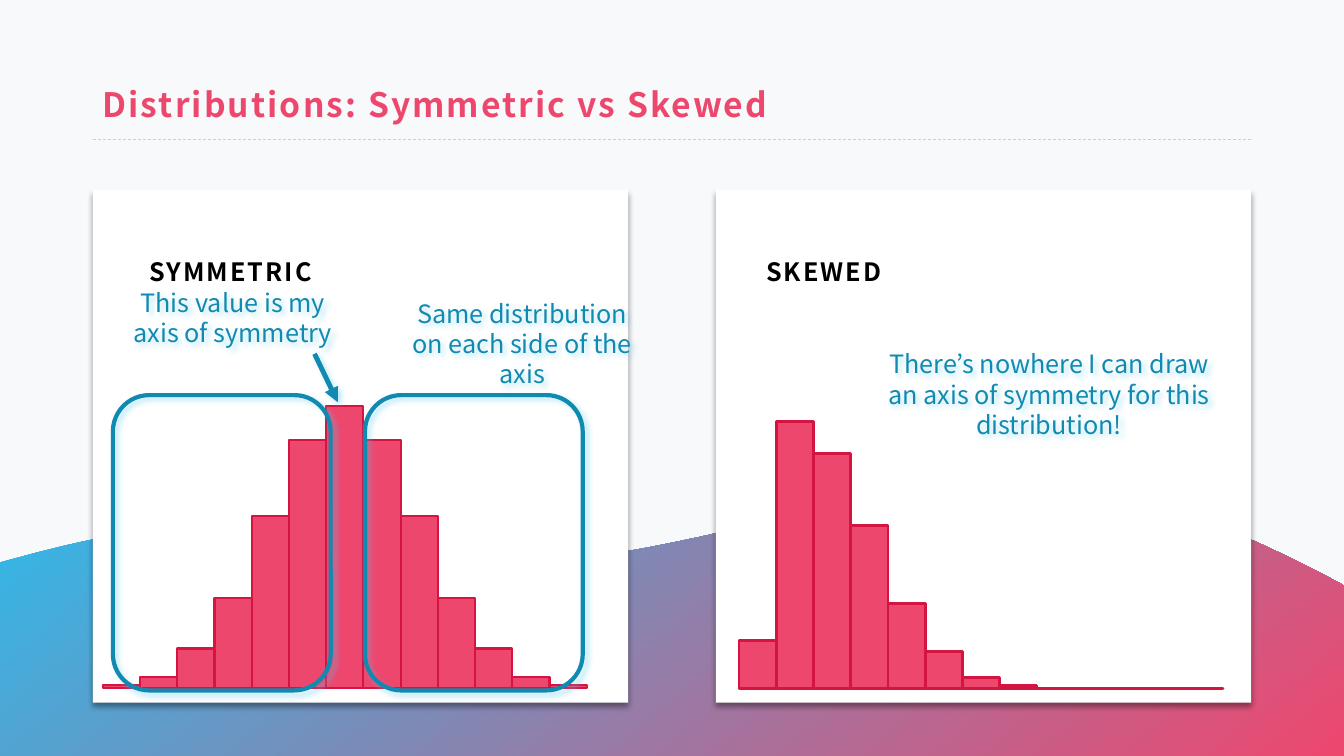
from dataclasses import dataclass

from lxml.etree import SubElement
from pptx import Presentation
from pptx.chart.data import CategoryChartData
from pptx.dml.color import RGBColor
from pptx.enum.chart import XL_CHART_TYPE
from pptx.enum.dml import MSO_LINE
from pptx.enum.shapes import MSO_CONNECTOR, MSO_SHAPE
from pptx.enum.text import MSO_ANCHOR, PP_ALIGN
from pptx.oxml import parse_xml
from pptx.oxml.ns import nsdecls, qn
from pptx.util import Inches, Pt


@dataclass(frozen=True)
class Theme:
    font: str = "Noto Sans CJK JP"
    background: str = "F8F9FB"
    card: str = "FFFFFF"
    text: str = "000000"
    accent: str = "EE476E"
    bar_line: str = "D41441"
    note: str = "118AB1"
    note_shadow: str = "52C8EE"
    rule: str = "D0CECE"
    wave_start: str = "2DBAEA"
    title_size: float = 24
    body_size: float = 18
    chart_size: float = 10


THEME = Theme()


def color(value):
    return RGBColor.from_string(value)


def add_effects(shape, shadow_color=None, direction=45):
    """Replace the inherited shadow by none or by a soft coloured one."""
    properties = shape._element.spPr
    effects = parse_xml(f"<a:effectLst {nsdecls('a')}/>")
    if shadow_color:
        shadow = SubElement(effects, qn("a:outerShdw"), blurRad=str(Pt(4)),
                            dist=str(Pt(3)), dir=str(direction * 60000))
        tint = SubElement(shadow, qn("a:srgbClr"), val=shadow_color)
        SubElement(tint, qn("a:alpha"), val="40000")
    properties.append(effects)


def add_text(slide, box, text, size, text_color, bold=False, spacing=None):
    shape = slide.shapes.add_textbox(*map(Inches, box))
    frame = shape.text_frame
    frame.word_wrap = True
    frame.text = text
    paragraph = frame.paragraphs[0]
    run = paragraph.runs[0]
    run.font.name = THEME.font
    run.font.size = Pt(size)
    run.font.bold = bold
    run.font.color.rgb = color(text_color)
    if spacing:
        run.font._element.set("spc", str(int(spacing * 100)))
    return shape


# Backdrop: pale background with a gradient wave
def curve(start, first, second, end, steps=16):
    """Points along a cubic curve, without its start."""
    for step in range(1, steps + 1):
        t = step / steps
        u = 1 - t
        yield tuple(u**3 * a + 3 * u * u * t * b + 3 * u * t * t * c + t**3 * d
                    for a, b, c, d in zip(start, first, second, end))


def add_backdrop(slide, width, height):
    slide.background.fill.solid()
    slide.background.fill.fore_color.rgb = color(THEME.background)

    points = [(0, height), (0, 5.58), (0.15, 5.54)]
    for bend in (
        ((0.69, 5.39), (1.39, 5.23), (2.02, 5.21)),
        ((3.03, 5.17), (4.09, 5.63), (5.48, 5.56)),
        ((6.87, 5.48), (8.96, 4.69), (10.35, 4.78)),
        ((11.4, 4.84), (12.54, 5.39), (13.26, 5.77)),
    ):
        points.extend(curve(points[-1], *bend))
    points.append((width, 5.81))

    builder = slide.shapes.build_freeform(Inches(width), Inches(height))
    builder.add_line_segments([(Inches(x), Inches(y)) for x, y in points])
    wave = builder.convert_to_shape()
    wave.shadow.inherit = False
    wave.line.fill.background()
    wave.fill.gradient()
    wave.fill.gradient_angle = 310
    for stop, value in zip(wave.fill.gradient_stops,
                           (THEME.wave_start, THEME.accent)):
        stop.color.rgb = color(value)


# Title with a dashed rule along its lower edge
def add_title(slide, left, top, width, height):
    title = add_text(slide, (left, top, width, height),
                     "Distributions: Symmetric vs Skewed",
                     THEME.title_size, THEME.accent, True, 1.5)
    title.text_frame.vertical_anchor = MSO_ANCHOR.MIDDLE
    title.text_frame.paragraphs[0].line_spacing = 0.9
    bottom = Inches(top + height)
    rule = slide.shapes.add_connector(MSO_CONNECTOR.STRAIGHT, Inches(left), bottom,
                                      Inches(left + width), bottom)
    rule.line.color.rgb = color(THEME.rule)
    rule.line.width = Pt(0.5)
    rule.line.dash_style = MSO_LINE.DASH
    add_effects(rule)


# Card: white panel with a heading
def add_card(slide, left, top, heading, heading_offset):
    panel = slide.shapes.add_shape(MSO_SHAPE.RECTANGLE, Inches(left), Inches(top),
                                   Inches(5.31), Inches(5.09))
    panel.fill.solid()
    panel.fill.fore_color.rgb = color(THEME.card)
    panel.line.fill.background()
    add_effects(panel, THEME.text, 90)
    label = add_text(slide, (left + heading_offset, top + 0.35, 4.47, 0.77),
                     heading, THEME.body_size, THEME.text, True, 1.5)
    label.text_frame.vertical_anchor = MSO_ANCHOR.MIDDLE
    paragraph = label.text_frame.paragraphs[0]
    paragraph.line_spacing = 1.5
    paragraph.space_before = Pt(15)


def add_histogram(slide, box, values, line_width):
    data = CategoryChartData()
    data.categories = [str(number) for number in range(1, len(values) + 1)]
    data.add_series("Series 1", values)
    chart = slide.shapes.add_chart(XL_CHART_TYPE.COLUMN_CLUSTERED,
                                   *map(Inches, box), data).chart
    chart.has_legend = chart.has_title = False
    chart.font.name = THEME.font
    chart.font.size = Pt(THEME.chart_size)
    chart.font.color.rgb = color(THEME.text)
    chart.value_axis.minimum_scale = 0
    chart.value_axis.maximum_scale = 120
    chart.value_axis.has_major_gridlines = False
    chart.value_axis.visible = chart.category_axis.visible = False

    plot = chart.plots[0]
    plot.gap_width = 0
    plot.overlap = -27
    plot.vary_by_categories = False
    bars = plot.series[0].format
    bars.fill.solid()
    bars.fill.fore_color.rgb = color(THEME.accent)
    bars.line.color.rgb = color(THEME.bar_line)
    bars.line.width = Pt(line_width)

    # Fixed plot area inside the chart frame
    plot_area = chart._chartSpace.chart.plotArea
    for old in plot_area.findall(qn("c:layout")):
        plot_area.remove(old)
    layout = parse_xml(f"<c:layout {nsdecls('c')}><c:manualLayout/></c:layout>")
    for tag, value in (("layoutTarget", "inner"), ("xMode", "edge"),
                       ("yMode", "edge"), ("x", "0.02"), ("y", "0.06"),
                       ("w", "0.96"), ("h", "0.92")):
        SubElement(layout[0], qn(f"c:{tag}"), val=value)
    plot_area.insert(0, layout)


def add_note(slide, box, text):
    note = add_text(slide, box, text, THEME.body_size, THEME.note)
    note.text_frame.paragraphs[0].alignment = PP_ALIGN.CENTER
    add_effects(note, THEME.note_shadow)


def add_symmetric(slide, left, top):
    add_card(slide, left, top, "SYMMETRIC", 0.46)
    rising = [1, 4, 14, 32, 61, 88]
    add_histogram(slide, (left, top + 1.37, 5, 3.65),
                  rising + [100] + rising[::-1], 1.5)
    add_note(slide, (left + 0.19, top + 0.92, 2.4, 0.71),
             "This value is my axis of symmetry")
    add_note(slide, (left + 3.06, top + 1.03, 2.4, 1.01),
             "Same distribution on each side of the axis")

    # Arrow to the middle bar
    arrow = slide.shapes.add_connector(
        MSO_CONNECTOR.STRAIGHT, Inches(left + 2.2), Inches(top + 1.63),
        Inches(left + 2.43), Inches(top + 2.11))
    arrow.line.color.rgb = color(THEME.note)
    arrow.line.width = Pt(3.5)
    SubElement(arrow.line._get_or_add_ln(), qn("a:tailEnd"), type="triangle")
    add_effects(arrow, THEME.note_shadow)

    # Frames around the two matching halves
    for offset in (0.2, 2.7):
        half = slide.shapes.add_shape(
            MSO_SHAPE.ROUNDED_RECTANGLE, Inches(left + offset), Inches(top + 2.04),
            Inches(2.16), Inches(2.93))
        half.fill.background()
        half.line.color.rgb = color(THEME.note)
        half.line.width = Pt(3)
        add_effects(half, THEME.note_shadow)


def add_skewed(slide, left, top):
    add_card(slide, left, top, "SKEWED", 0.4)
    add_histogram(slide, (left + 0.13, top + 1.57, 5, 3.45),
                  [18, 100, 88, 61, 32, 14, 4, 1] + [0] * 5, 2)
    add_note(slide, (left + 1.5, top + 1.53, 3.61, 1.01),
             "There’s nowhere I can draw an axis of symmetry for this distribution!")


def main():
    presentation = Presentation()
    presentation.slide_width = Inches(13.33)
    presentation.slide_height = Inches(7.5)
    slide = presentation.slides.add_slide(presentation.slide_layouts[6])
    add_backdrop(slide, 13.33, 7.5)
    add_title(slide, 0.92, 0.74, 11.5, 0.64)
    add_symmetric(slide, 0.92, 1.88)
    add_skewed(slide, 7.1, 1.88)
    presentation.save("out.pptx")


if __name__ == "__main__":
    main()
